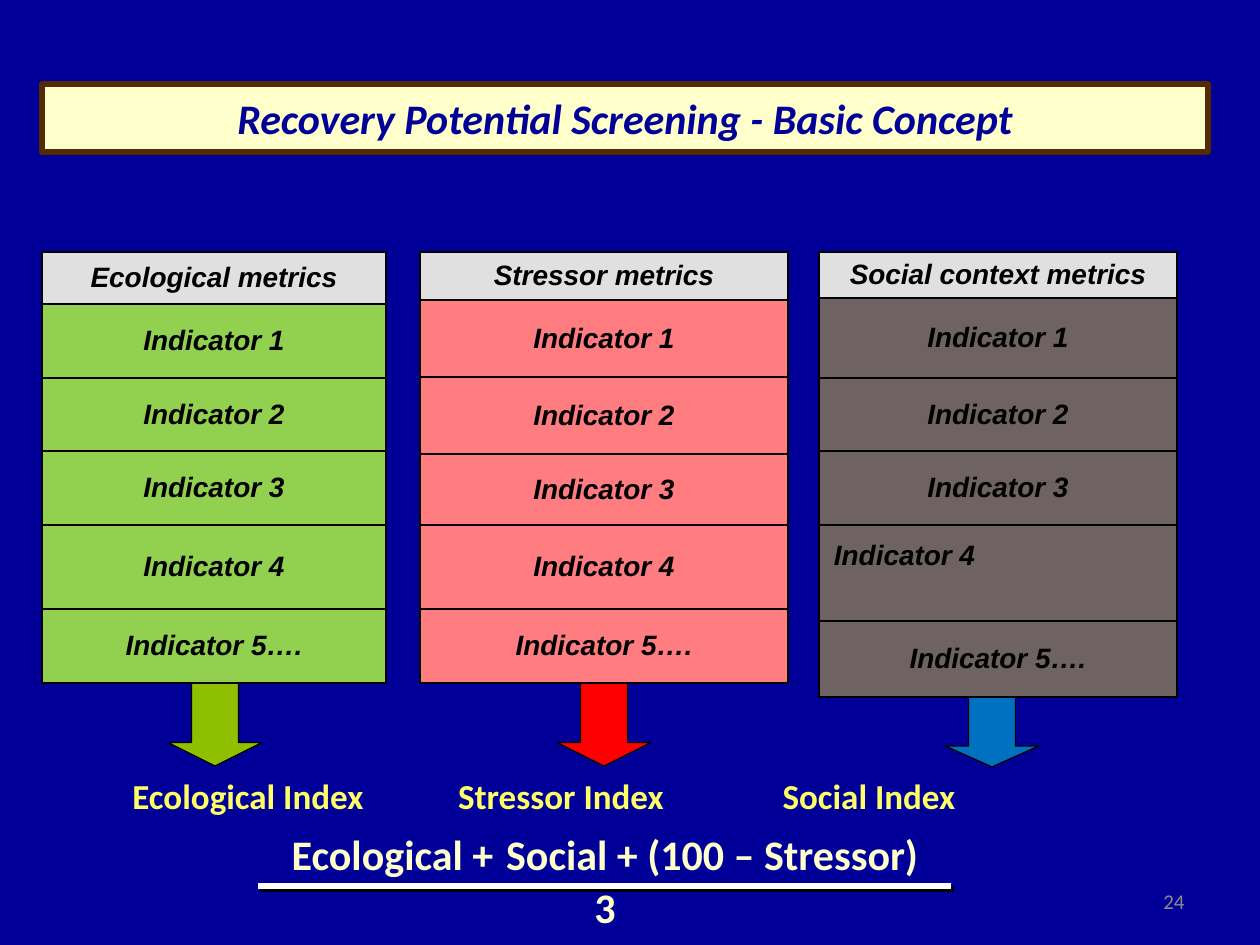
from collections import namedtuple
from dataclasses import dataclass

from lxml import etree
from pptx import Presentation
from pptx.dml.color import RGBColor
from pptx.enum.shapes import MSO_CONNECTOR, MSO_SHAPE
from pptx.enum.text import MSO_ANCHOR, MSO_AUTO_SIZE, PP_ALIGN
from pptx.oxml.ns import qn
from pptx.util import Emu, Pt

CENTER, LEFT, RIGHT = PP_ALIGN.CENTER, PP_ALIGN.LEFT, PP_ALIGN.RIGHT
MIDDLE, TOP = MSO_ANCHOR.MIDDLE, MSO_ANCHOR.TOP
DOWN_ARROW = MSO_SHAPE.DOWN_ARROW
STRAIGHT = MSO_CONNECTOR.STRAIGHT
NO_AUTOFIT = MSO_AUTO_SIZE.NONE
TITLE_ONLY = 5

Box = namedtuple("Box", "x y w h")
Metric = namedtuple("Metric", "heading fill box rows arrow arrow_fill index index_x")


@dataclass(frozen=True)
class Theme:
    background: str = "000099"
    cream: str = "FFFFCC"
    brown: str = "542A00"
    yellow: str = "FFFF66"
    heading: str = "E0E0E0"
    number: str = "8C8C8C"
    black: str = "000000"
    white: str = "FFFFFF"
    font: str = "Calibri"
    table_font: str = "Arial"
    title_size: int = 24
    gap_size: int = 32
    index_size: int = 20
    table_size: int = 16
    number_size: int = 12
    thick: int = 3
    border: int = 1
    thin: float = 0.75


THEME = Theme()
INDICATORS = ["Indicator 1", "Indicator 2", "Indicator 3", "Indicator 4", "Indicator 5…."]
METRICS = [
    Metric("Ecological metrics", "92D050", Box(42, 252, 344, 431),
           [52, 74, 73, 74, 84, 74], Box(126, 420, 94, 94), "8EC000", "Ecological Index", 66),
    Metric("Stressor metrics", "FF7C80", Box(420, 252, 368, 431),
           [48, 77, 77, 71, 84, 74], Box(137, 420, 94, 94), "FF0000", "Stressor Index", 1),
    Metric("Social context metrics", "6E6263", Box(819, 252, 358, 445),
           [46, 80, 73, 74, 96, 76], Box(126, 431, 94, 84), "0070C0", "Social Index", -90),
]


def px(length):
    return Emu(round(length * 914400 / 126))


def place(box):
    return [px(length) for length in box]


def rgb(color):
    return RGBColor.from_string(color)


def format_text(frame, size, color, font=THEME.font, bold=True, italic=False, align=CENTER):
    for paragraph in frame.paragraphs:
        paragraph.alignment = align
        for run in paragraph.runs:
            run.font.size = Pt(size)
            run.font.name = font
            run.font.bold = bold
            run.font.italic = italic
            run.font.color.rgb = rgb(color)


def paint(shape, fill, line, width):
    shape.fill.solid()
    shape.fill.fore_color.rgb = rgb(fill)
    shape.line.color.rgb = rgb(line)
    shape.line.width = Pt(width)


def drop_shadow():
    effects = etree.Element(qn("a:effectLst"))
    shadow = etree.SubElement(effects, qn("a:outerShdw"), dist="35921", dir="2700000", algn="ctr")
    etree.SubElement(shadow, qn("a:srgbClr"), val=THEME.black)
    return effects


def add_borders(cell):
    properties = cell._tc.get_or_add_tcPr()
    for index, side in enumerate(("a:lnL", "a:lnR", "a:lnT", "a:lnB")):
        line = etree.Element(qn(side), w=str(Pt(THEME.border)))
        fill = etree.SubElement(line, qn("a:solidFill"))
        etree.SubElement(fill, qn("a:srgbClr"), val=THEME.black)
        properties.insert(index, line)


def add_title(slide, box):
    title = slide.shapes.title
    title.left, title.top, title.width, title.height = place(box)
    paint(title, THEME.cream, THEME.brown, THEME.thick)
    frame = title.text_frame
    frame.text = "Recovery Potential Screening - Basic Concept"
    frame.auto_size = NO_AUTOFIT
    frame.vertical_anchor = MIDDLE
    format_text(frame, THEME.title_size, THEME.background, italic=True)


def add_label(slide, box, text, size, color, bold=True, align=CENTER):
    frame = slide.shapes.add_textbox(*place(box)).text_frame
    frame.word_wrap = True
    frame.vertical_anchor = MIDDLE
    frame.text = text
    format_text(frame, size, color, bold=bold, align=align)


def add_metric(slide, metric):
    box, offset = metric.box, metric.arrow
    arrow_box = Box(box.x + offset.x, box.y + offset.y, offset.w, offset.h)
    arrow = slide.shapes.add_shape(DOWN_ARROW, *place(arrow_box))
    arrow.adjustments[0], arrow.adjustments[1] = 0.5, 0.25
    arrow.shadow.inherit = False
    paint(arrow, metric.arrow_fill, THEME.black, THEME.thin)

    texts = [metric.heading] + INDICATORS
    table = slide.shapes.add_table(len(texts), 1, *place(box)).table
    table.first_row = table.horz_banding = False
    for row, (text, height) in enumerate(zip(texts, metric.rows)):
        table.rows[row].height = px(height)
        cell = table.cell(row, 0)
        cell.text = text
        cell.vertical_anchor = MIDDLE
        cell.fill.solid()
        cell.fill.fore_color.rgb = rgb(metric.fill if row else THEME.heading)
        format_text(cell.text_frame, THEME.table_size, THEME.black, THEME.table_font, italic=True)
        add_borders(cell)

    index_box = Box(box.x + metric.index_x, 768, 280, 54)
    add_label(slide, index_box, metric.index, THEME.index_size, THEME.yellow)
    return table


def shift_social_indicator(table):
    cell = table.cell(4, 0)
    cell.vertical_anchor = TOP
    cell.margin_top = px(15)
    cell.margin_left = px(15)
    cell.text_frame.paragraphs[0].alignment = LEFT


def add_formula(slide, box):
    group = slide.shapes.add_group_shape()
    frame = group.shapes.add_textbox(*place(box)).text_frame
    frame.word_wrap = False
    frame.vertical_anchor = MIDDLE
    numerator, denominator = frame.paragraphs[0], frame.add_paragraph()
    for part in ("Ecological +", " ", "Social + (100 – Stressor)"):
        numerator.add_run().text = part
    denominator.text = "3"
    format_text(frame, THEME.title_size, THEME.cream)
    numerator.runs[1].font.size = Pt(THEME.gap_size)
    for run in numerator.runs + denominator.runs:
        run.font._element.find(qn("a:solidFill")).addnext(drop_shadow())

    bar_y = px(box.y + 78)
    bar = group.shapes.add_connector(STRAIGHT, px(box.x + 48), bar_y, px(box.x + 741), bar_y)
    bar.line.color.rgb = rgb(THEME.white)
    bar.line.width = Pt(THEME.thick)
    bar._element.spPr.append(drop_shadow())


def main():
    presentation = Presentation()
    presentation.slide_width, presentation.slide_height = px(1260), px(945)
    slide = presentation.slides.add_slide(presentation.slide_layouts[TITLE_ONLY])
    slide.background.fill.solid()
    slide.background.fill.fore_color.rgb = rgb(THEME.background)
    add_title(slide, Box(42, 84, 1166, 68))
    tables = [add_metric(slide, metric) for metric in METRICS]
    shift_social_indicator(tables[-1])
    add_formula(slide, Box(210, 808, 790, 131))
    add_label(slide, Box(903, 876, 294, 50), "24", THEME.number_size, THEME.number,
              bold=False, align=RIGHT)
    presentation.save("out.pptx")


if __name__ == "__main__":
    main()
